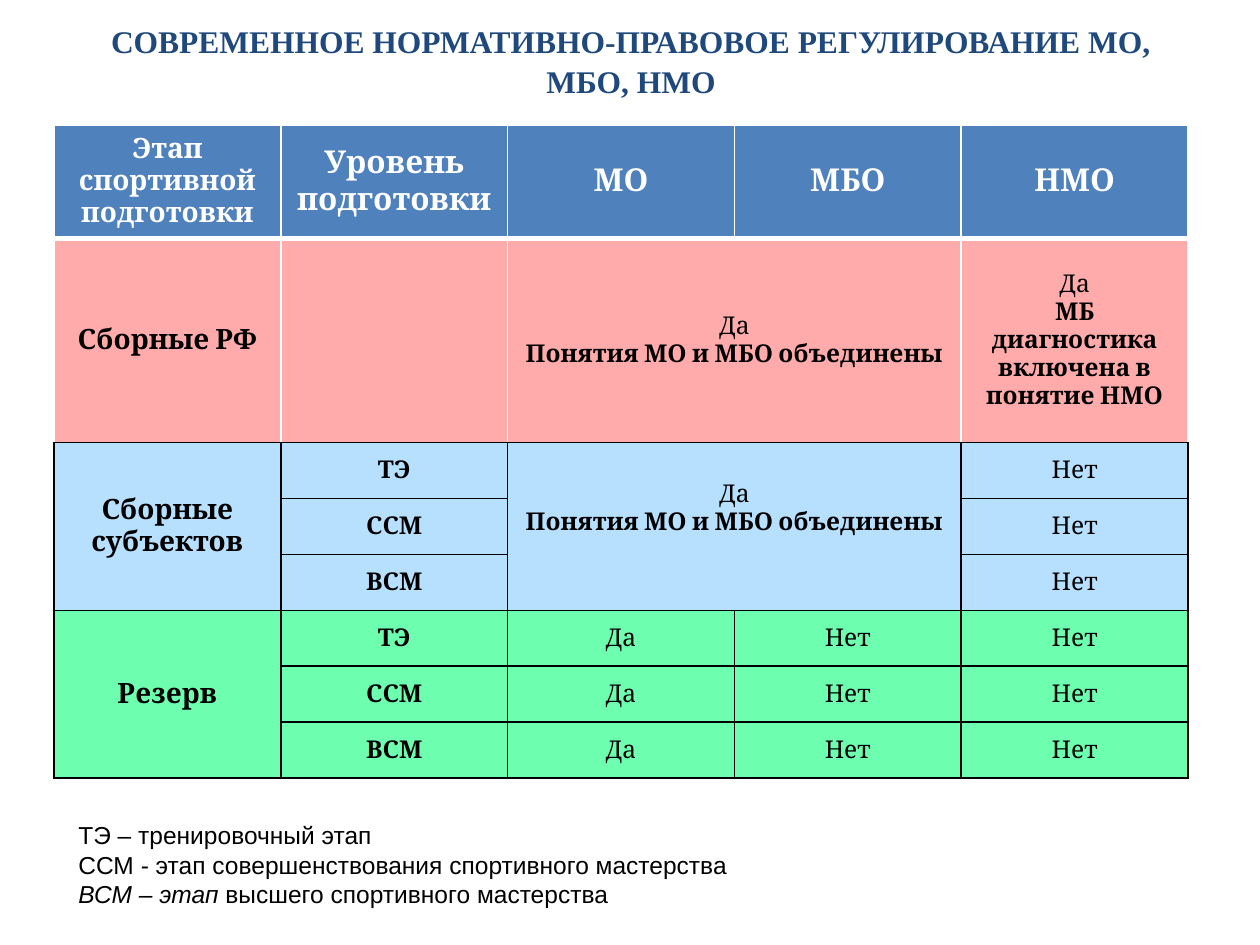
"""Build a slide on the regulation of medical support by stage of sports training."""
from lxml.etree import SubElement
from pptx import Presentation
from pptx.dml.color import RGBColor
from pptx.enum.text import MSO_ANCHOR, PP_ALIGN
from pptx.oxml import parse_xml
from pptx.oxml.ns import nsdecls, qn
from pptx.util import Emu, Pt

PX = 914400 / 126
THEME = {
    "navy": "1F497D", "white": "FFFFFF", "black": "000000",
    "header": "4F81BD", "national": "FFABAB", "regional": "B7E0FF", "reserve": "6DFFAF",
    "heading": 18, "stage": 16, "body": 14,
    "title_font": "Times New Roman", "table_font": "Cambria", "note_font": "Arial",
}


def px(*lengths):
    return [Emu(round(length * PX)) for length in lengths]


def write(paragraph, text, color, **formats):
    run = paragraph.add_run()
    run.text = text
    run.font.color.rgb = RGBColor.from_string(THEME[color])
    for attribute, value in formats.items():
        setattr(run.font, attribute, value)


deck = Presentation()
deck.slide_width, deck.slide_height = px(1260, 945)
slide = deck.slides.add_slide(deck.slide_layouts[6])

title = slide.shapes.add_textbox(*px(64, 16, 1134, 87)).text_frame
title.word_wrap = True
title.vertical_anchor = MSO_ANCHOR.MIDDLE
heading = title.paragraphs[0]
for attribute, value in {"alignment": PP_ALIGN.CENTER, "line_spacing": 1.07, "space_after": Pt(8)}.items():
    setattr(heading, attribute, value)
write(heading, "СОВРЕМЕННОЕ НОРМАТИВНО-ПРАВОВОЕ РЕГУЛИРОВАНИЕ МО, МБО, НМО", "navy",
      name=THEME["title_font"], size=Pt(THEME["heading"]), bold=True)

merged_note = "Да\nПонятия МО и МБО объединены"
rows = [
    ("header", ["Этап спортивной подготовки", "Уровень подготовки", "МО", "МБО", "НМО"]),
    ("national", ["Сборные РФ", "", merged_note, "", "Да\nМБ диагностика включена в понятие НМО"]),
    ("regional", ["Сборные субъектов", "ТЭ", merged_note, "", "Нет"]),
    ("regional", ["", "ССМ", "", "", "Нет"]),
    ("regional", ["", "ВСМ", "", "", "Нет"]),
    ("reserve", ["Резерв", "ТЭ", "Да", "Нет", "Нет"]),
    ("reserve", ["", "ССМ", "Да", "Нет", "Нет"]),
    ("reserve", ["", "ВСМ", "Да", "Нет", "Нет"]),
]
borders = {
    "header": {"lnL": ("white", 1), "lnR": ("white", 1), "lnT": ("white", 1), "lnB": ("white", 3)},
    "national": {"lnL": ("white", 1), "lnR": ("white", 1), "lnT": ("white", 1), "lnB": ("black", 1)},
}
grid_borders = {side: ("black", 1) for side in ("lnL", "lnR", "lnT", "lnB")}

stages = slide.shapes.add_table(len(rows), 5, *px(54, 125, 1134, 650)).table
stages.horz_banding = False
for column in stages.columns:
    column.width = px(1134 / 5)[0]
for row, height in zip(stages.rows, px(110, 204, *[56] * 6)):
    row.height = height

for r, (group, texts) in enumerate(rows):
    for c, text in enumerate(texts):
        cell = stages.cell(r, c)
        cell.vertical_anchor = MSO_ANCHOR.MIDDLE
        properties = cell._tc.get_or_add_tcPr()
        for side, (color, width) in borders.get(group, grid_borders).items():
            line = parse_xml(f'<a:{side} {nsdecls("a")} w="{Pt(width)}"/>')
            SubElement(SubElement(line, qn("a:solidFill")), qn("a:srgbClr"), val=THEME[color])
            properties.append(line)
        cell.fill.solid()
        cell.fill.fore_color.rgb = RGBColor.from_string(THEME[group])
        if not text:
            continue
        size = "stage" if c == 0 else "heading" if r == 0 else "body"
        for n, words in enumerate(text.split("\n")):
            paragraph = cell.text_frame.paragraphs[0] if n == 0 else cell.text_frame.add_paragraph()
            paragraph.alignment = PP_ALIGN.CENTER
            write(paragraph, words, "white" if r == 0 else "black", name=THEME["table_font"],
                  size=Pt(THEME[size]), bold=r == 0 or c < 2 or n > 0)

for top, left, bottom, right in [(1, 2, 1, 3), (2, 0, 4, 0), (2, 2, 4, 3), (5, 0, 7, 0)]:
    stages.cell(top, left).merge(stages.cell(bottom, right))
stages.cell(2, 2).margin_bottom = px(42)[0]

legend = slide.shapes.add_textbox(*px(66, 814, 1121, 131)).text_frame
legend.word_wrap = True
abbreviations = [
    [("ТЭ – тренировочный этап", False)],
    [("ССМ - этап совершенствования спортивного мастерства", False)],
    [("ВСМ – этап ", True), ("высшего спортивного мастерства", False)],
]
for n, parts in enumerate(abbreviations):
    paragraph = legend.paragraphs[0] if n == 0 else legend.add_paragraph()
    for words, italic in parts:
        write(paragraph, words, "black", name=THEME["note_font"], size=Pt(THEME["body"]), italic=italic)

deck.save("out.pptx")
